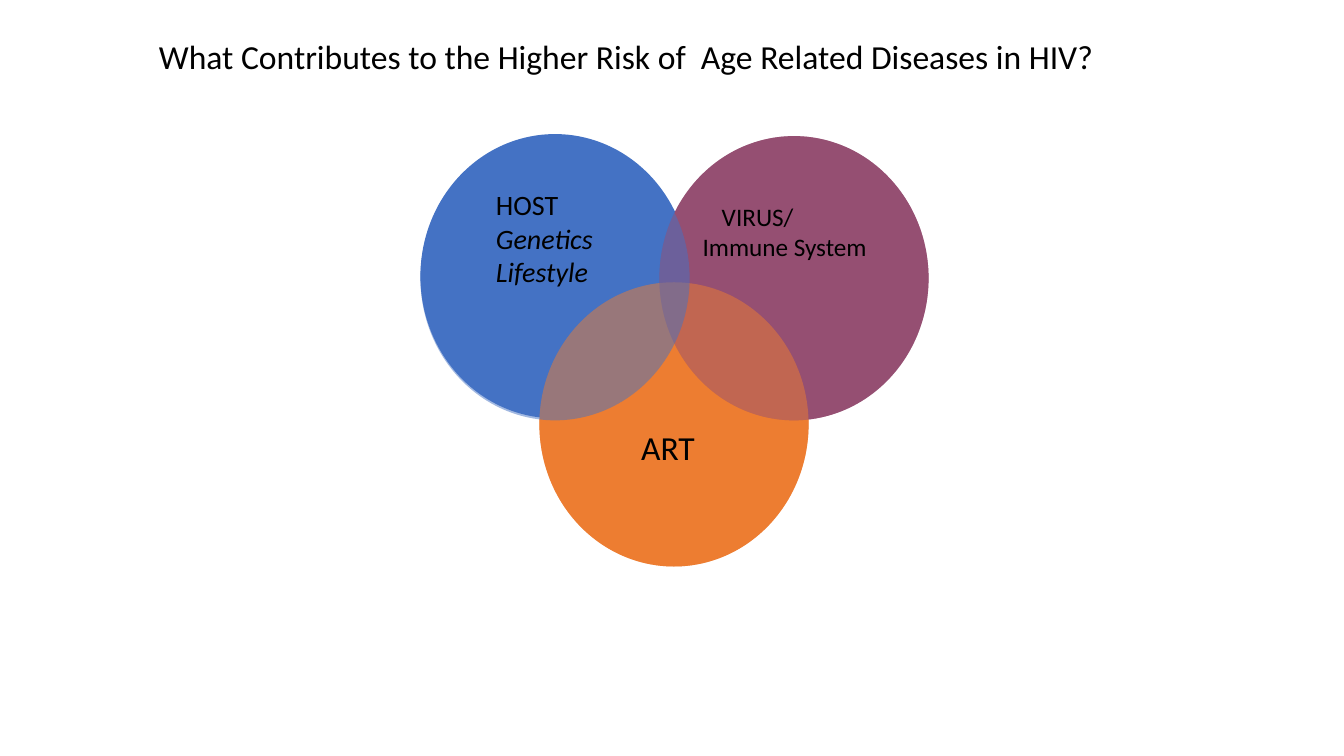
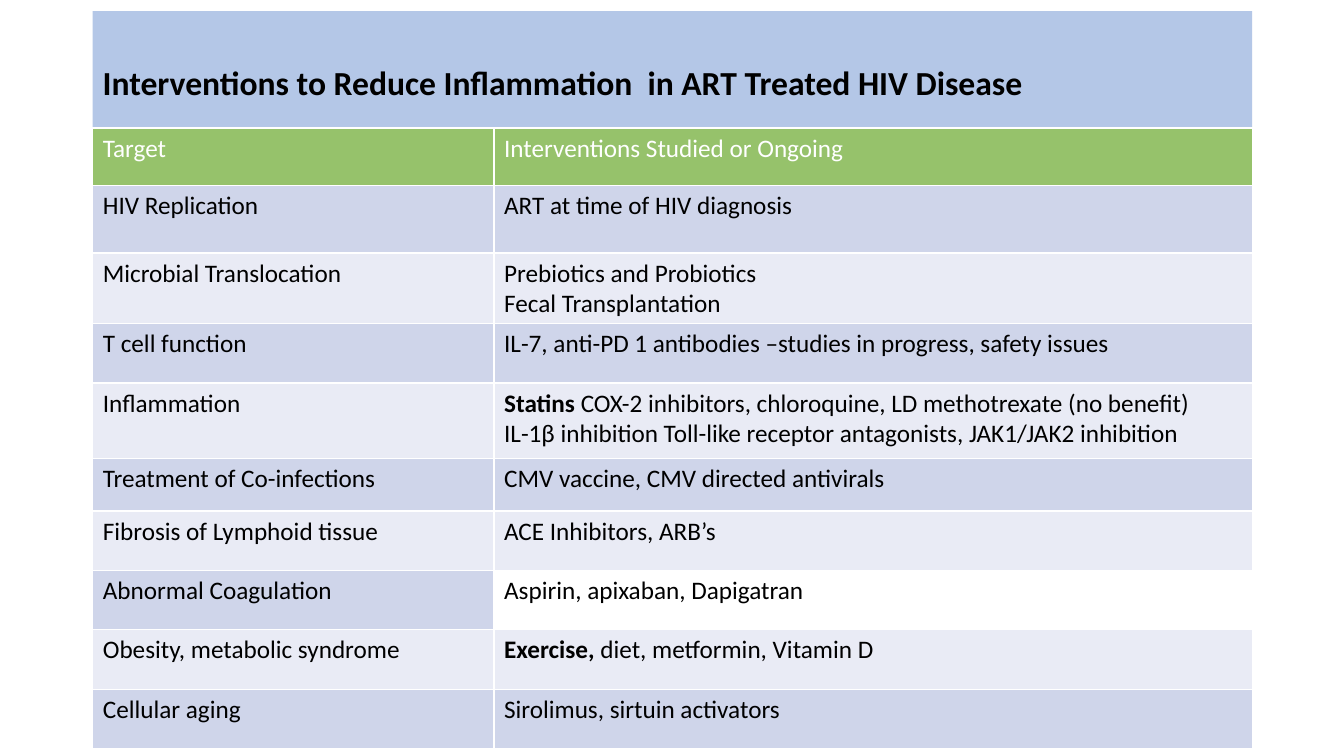
import pptx
import pptx.util
import pptx.dml.color
import pptx.enum.shapes
import pptx.enum.text
import pptx.oxml.ns
import lxml.etree

Inches = pptx.util.Inches
RGBColor = pptx.dml.color.RGBColor
MSO_SHAPE = pptx.enum.shapes.MSO_SHAPE
ALIGN = pptx.enum.text.PP_ALIGN
ANCHOR = pptx.enum.text.MSO_ANCHOR

BLACK = RGBColor(0x00, 0x00, 0x00)
WHITE = RGBColor(0xFF, 0xFF, 0xFF)
BLUE = RGBColor(0x44, 0x72, 0xC4)
ORANGE = RGBColor(0xED, 0x7D, 0x31)
PLUM = RGBColor(0x95, 0x4F, 0x72)
TITLE_BAND = RGBColor(0xB4, 0xC7, 0xE7)
HEADER_GREEN = RGBColor(0x96, 0xC2, 0x6B)
BANDS = (RGBColor(0xCF, 0xD5, 0xEA), RGBColor(0xE9, 0xEB, 0xF5))

FONT = "Calibri"
TITLE_SIZE = 24

RISK_TITLE = "What Contributes to the Higher Risk of  Age Related Diseases in HIV?"
CIRCLE_SIZE = (2.67, 2.82)
# left, top, colour, opacity in percent; from back to front
CIRCLES = [
    (4.17, 1.33, BLUE, 100),
    (5.35, 2.8, ORANGE, 100),
    (6.54, 1.35, PLUM, 100),
    (6.54, 1.35, PLUM, 50),
    (5.35, 2.8, ORANGE, 50),
    (4.17, 1.35, BLUE, 50),
]
# left, top, width, height, paragraphs, size
CIRCLE_LABELS = [
    (4.82, 1.81, 1.33, 1.11,
     ["HOST", [("Genetics", "italic")], [("Lifestyle", "italic")]], 20),
    (6.87, 1.95, 2.2, 0.71, ["VIRUS/", "Immune System"], 18),
    (6.26, 4.19, 0.82, 0.5, ["ART"], 24),
]
VIRUS_INDENT = 0.19

INTERVENTIONS_TITLE = "Interventions to Reduce Inflammation  in ART Treated HIV Disease"
TABLE_LEFT, TABLE_TOP = 0.92, 1.27
COLUMN_WIDTHS = (3.98, 7.52)
UNFILLED_TARGET = "Abnormal Coagulation"
# row height, target, paragraphs of interventions
INTERVENTIONS = [
    (0.57, "Target", ["Interventions Studied or Ongoing"]),
    (0.67, "HIV Replication", ["ART at time of HIV diagnosis"]),
    (0.67, "Microbial Translocation",
     ["Prebiotics and Probiotics", "Fecal Transplantation"]),
    (0.59, "T cell function",
     ["IL-7, anti-PD 1 antibodies –studies in progress, safety issues"]),
    (0.75, "Inflammation",
     [[("Statins ", "bold"),
       ("COX-2 inhibitors, chloroquine, LD methotrexate (no benefit)", None)],
      "IL-1β inhibition Toll-like receptor antagonists, JAK1/JAK2 inhibition"]),
    (0.52, "Treatment of Co-infections", ["CMV vaccine, CMV directed antivirals"]),
    (0.59, "Fibrosis of Lymphoid tissue", ["ACE Inhibitors, ARB’s"]),
    (0.59, UNFILLED_TARGET, ["Aspirin, apixaban, Dapigatran"]),
    (0.59, "Obesity, metabolic syndrome",
     [[("Exercise,", "bold"), (" diet, metformin, Vitamin D", None)]]),
    (0.59, "Cellular aging", ["Sirolimus, sirtuin activators"]),
]


def write_text(frame, paragraphs, size=18, color=BLACK, bold=False,
               align=ALIGN.LEFT, line_spacing=None):
    """Fill a frame; a paragraph is a string or a list of (text, emphasis) runs."""
    for number, content in enumerate(paragraphs):
        paragraph = frame.add_paragraph() if number else frame.paragraphs[0]
        paragraph.alignment = align
        paragraph.line_spacing = line_spacing
        runs = [(content, None)] if isinstance(content, str) else content
        for text, emphasis in runs:
            run = paragraph.add_run()
            run.text = text
            run.font.name = FONT
            run.font.size = pptx.util.Pt(size)
            run.font.color.rgb = color
            run.font.bold = bold or emphasis == "bold"
            run.font.italic = emphasis == "italic"


def add_text_box(slide, box, paragraphs, **text_format):
    frame = slide.shapes.add_textbox(*map(Inches, box)).text_frame
    frame.word_wrap = True
    write_text(frame, paragraphs, **text_format)
    return frame


def add_filled_shape(slide, kind, box, color, opacity=100):
    shape = slide.shapes.add_shape(kind, *map(Inches, box))
    shape.shadow.inherit = False
    shape.fill.solid()
    shape.fill.fore_color.rgb = color
    shape.line.fill.background()
    if opacity < 100:
        qn = pptx.oxml.ns.qn
        tint = shape.fill._xPr.find(qn("a:solidFill")).find(qn("a:srgbClr"))
        lxml.etree.SubElement(tint, qn("a:alpha"), val=str(opacity * 1000))
    return shape


def build_risk_slide(slide):
    for left, top, color, opacity in CIRCLES:
        add_filled_shape(slide, MSO_SHAPE.OVAL, (left, top, *CIRCLE_SIZE), color, opacity)
    for *box, paragraphs, size in CIRCLE_LABELS:
        frame = add_text_box(slide, box, paragraphs, size=size)
        if paragraphs[0] == "VIRUS/":
            properties = frame.paragraphs[0]._p.get_or_add_pPr()
            properties.set("marL", str(Inches(VIRUS_INDENT)))
    add_text_box(slide, (1, 0.31, 10.42, 0.5), [RISK_TITLE],
                 size=TITLE_SIZE, align=ALIGN.CENTER)


def build_interventions_slide(slide):
    table_width = sum(COLUMN_WIDTHS)
    band = add_filled_shape(slide, MSO_SHAPE.RECTANGLE,
                            (TABLE_LEFT, 0.11, table_width, 1.45), TITLE_BAND)
    band.text_frame.word_wrap = True
    band.text_frame.vertical_anchor = ANCHOR.MIDDLE
    write_text(band.text_frame, [INTERVENTIONS_TITLE], size=TITLE_SIZE,
               bold=True, line_spacing=0.9)

    table_height = sum(height for height, *_ in INTERVENTIONS)
    table = slide.shapes.add_table(
        len(INTERVENTIONS), len(COLUMN_WIDTHS),
        *map(Inches, (TABLE_LEFT, TABLE_TOP, table_width, table_height))).table
    for column, width in zip(table.columns, COLUMN_WIDTHS):
        column.width = Inches(width)
    for number, (height, target, studied) in enumerate(INTERVENTIONS):
        row = table.rows[number]
        row.height = Inches(height)
        fill = BANDS[(number - 1) % 2] if number else HEADER_GREEN
        for cell, paragraphs in zip(row.cells, ([target], studied)):
            cell.fill.solid()
            cell.fill.fore_color.rgb = fill
            write_text(cell.text_frame, paragraphs, color=BLACK if number else WHITE)
        if target == UNFILLED_TARGET:
            row.cells[1].fill.background()


def main():
    deck = pptx.Presentation()
    deck.slide_width, deck.slide_height = Inches(13.33), Inches(7.5)
    for build in (build_risk_slide, build_interventions_slide):
        build(deck.slides.add_slide(deck.slide_layouts[6]))
    deck.save("out.pptx")


if __name__ == "__main__":
    main()
